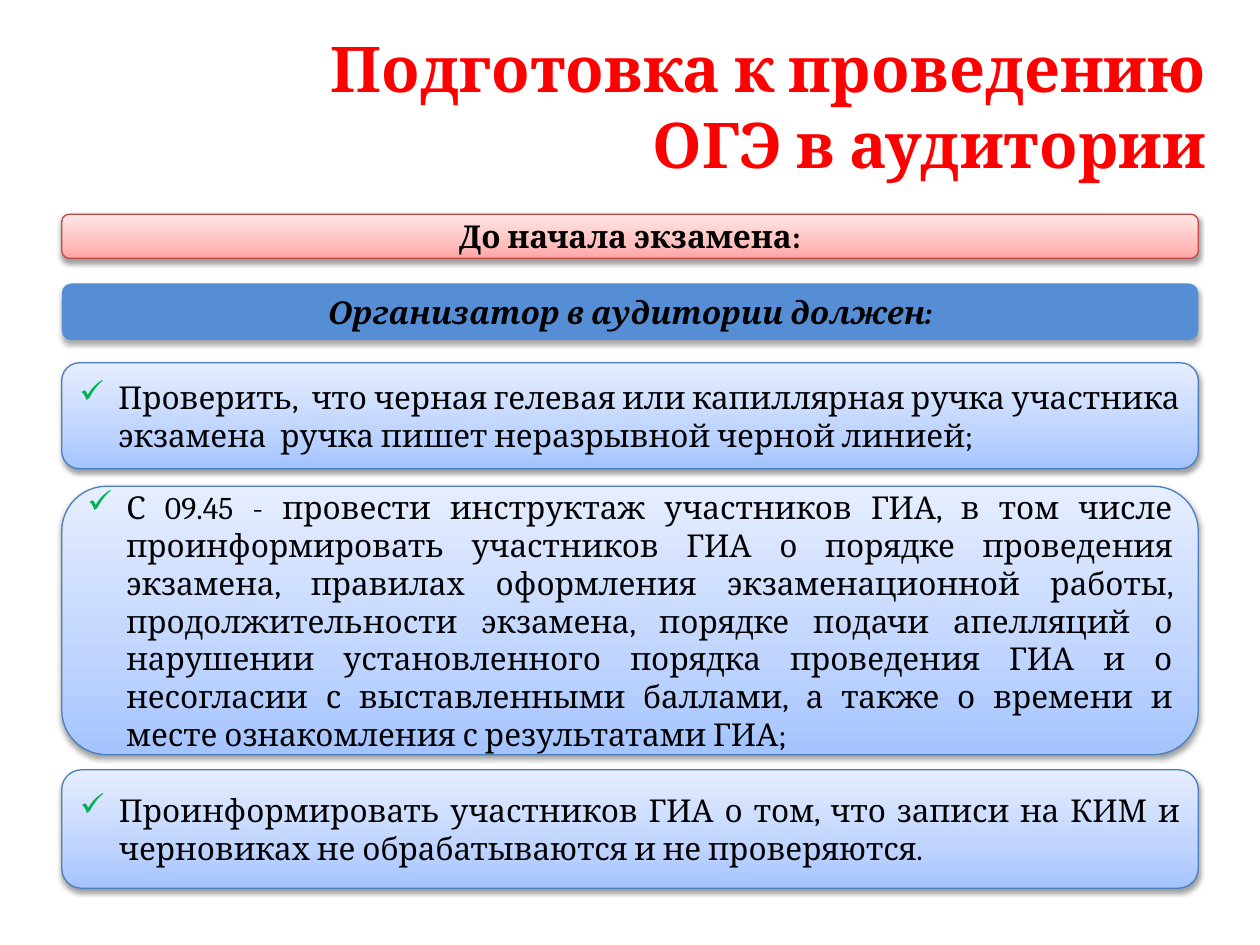
import copy

import pptx
import pptx.util
import pptx.dml.color
import pptx.enum.shapes
import pptx.enum.text
import pptx.oxml
import pptx.oxml.ns
from pptx.util import Inches

FONT = "Cambria"
ALIGN = pptx.enum.text.PP_ALIGN
LEFT, WIDTH = 0.49, 9.02
RED_STOPS = [(0, "FFA6A5"), (0.35, "FFC0BF"), (1, "FFE7E7")]
BLUE_STOPS = [(0, "A4C4FF"), (0.35, "BFD4FF"), (1, "E6EEFF")]

# Top, height, alignment and text of each duty
DUTIES = [
    (2.88, 0.84, ALIGN.LEFT,
     "Проверить,  что черная гелевая или капиллярная ручка участника экзамена  "
     "ручка пишет неразрывной черной линией;"),
    (3.86, 2.13, ALIGN.JUSTIFY,
     "С 09.45 - провести инструктаж участников ГИА, в том числе проинформировать "
     "участников ГИА о порядке проведения экзамена, правилах оформления "
     "экзаменационной работы, продолжительности экзамена, порядке подачи апелляций "
     "о нарушении установленного порядка проведения ГИА и о несогласии с "
     "выставленными баллами, а также о времени и месте ознакомления с "
     "результатами ГИА;"),
    (6.11, 0.94, ALIGN.JUSTIFY,
     "Проинформировать участников ГИА о том, что записи на КИМ и черновиках "
     "не обрабатываются и не проверяются."),
]


def color(value):
    return pptx.dml.color.RGBColor.from_string(value)


def element(xml):
    """Parse one drawing element, adding its namespace."""
    tag, rest = xml.split(" ", 1)
    return pptx.oxml.parse_xml(f"{tag} {pptx.oxml.ns.nsdecls('a')} {rest}")


def set_gradient(shape, stops):
    """Fill from bottom to top with three stops."""
    shape.fill.gradient()
    shape.fill.gradient_angle = 90
    stop_list = shape.element.spPr.find(".//" + pptx.oxml.ns.qn("a:gsLst"))
    stop_list.append(copy.deepcopy(stop_list[-1]))
    for stop, (position, value) in zip(shape.fill.gradient_stops, stops):
        stop.position = position
        stop.color.rgb = color(value)


def set_shadow(shape, distance, opacity):
    """Soft shadow falling straight down; distance in points."""
    shape.shadow.inherit = False
    effects = shape.element.spPr.find(pptx.oxml.ns.qn("a:effectLst"))
    effects.append(element(
        f'<a:outerShdw blurRad="{pptx.util.Pt(3.1)}" dist="{pptx.util.Pt(distance)}" '
        'dir="5400000" rotWithShape="0"><a:srgbClr val="000000">'
        f'<a:alpha val="{opacity * 1000}"/></a:srgbClr></a:outerShdw>'))


def set_text(box, text, size, value, align, bold=False, italic=False):
    frame = box.text_frame
    frame.word_wrap = True
    frame.vertical_anchor = pptx.enum.text.MSO_ANCHOR.MIDDLE
    para = frame.paragraphs[0]
    para.text = text
    para.alignment = align
    para.font.name = FONT
    para.font.size = pptx.util.Pt(size)
    para.font.bold = bold
    para.font.italic = italic
    para.font.color.rgb = color(value)


def add_panel(page, left, top, width, height):
    return page.shapes.add_shape(
        pptx.enum.shapes.MSO_SHAPE.ROUNDED_RECTANGLE,
        Inches(left), Inches(top), Inches(width), Inches(height))


def add_gradient_panel(page, left, top, width, height, stops, line):
    panel = add_panel(page, left, top, width, height)
    set_gradient(panel, stops)
    panel.line.color.rgb = color(line)
    panel.line.width = pptx.util.Pt(0.75)
    set_shadow(panel, 1.6, 38)
    return panel


def add_title(page, left, top, width, height):
    box = page.shapes.add_textbox(
        Inches(left), Inches(top), Inches(width), Inches(height))
    set_text(box, "Подготовка к проведению\vОГЭ в аудитории", 36, "FF0000",
             ALIGN.RIGHT, bold=True)


def add_stage(page, left, top, width, height):
    panel = add_gradient_panel(page, left, top, width, height, RED_STOPS, "BF4C48")
    set_text(panel, "До начала экзамена:", 18, "000000", ALIGN.CENTER, bold=True)


def add_role(page, left, top, width, height):
    panel = add_panel(page, left, top, width, height)
    panel.fill.solid()
    panel.fill.fore_color.rgb = color("558ED5")
    panel.line.fill.background()
    set_shadow(panel, 1.8, 35)
    set_text(panel, "Организатор в аудитории должен:", 18, "000000",
             ALIGN.CENTER, bold=True, italic=True)


def add_duty(page, left, top, width, height, align, text):
    panel = add_gradient_panel(page, left, top, width, height, BLUE_STOPS, "4B7EBC")
    # Green check mark with a hanging indent
    properties = panel.text_frame.paragraphs[0]._p.get_or_add_pPr()
    properties.set("marL", str(Inches(0.31)))
    properties.set("indent", str(-Inches(0.31)))
    properties.append(element('<a:buClr ><a:srgbClr val="00B050"/></a:buClr>'))
    properties.append(element('<a:buChar char="✓"/>'))
    set_text(panel, text, 18, "000000", align)


def main():
    deck = pptx.Presentation()
    deck.slide_width, deck.slide_height = Inches(10), Inches(7.5)
    page = deck.slides.add_slide(deck.slide_layouts[6])
    add_title(page, 0.67, 0.21, 9, 1.25)
    add_stage(page, LEFT, 1.7, WIDTH, 0.35)
    add_role(page, LEFT, 2.25, WIDTH, 0.45)
    for top, height, align, text in DUTIES:
        add_duty(page, LEFT, top, WIDTH, height, align, text)
    deck.save("out.pptx")


if __name__ == "__main__":
    main()
